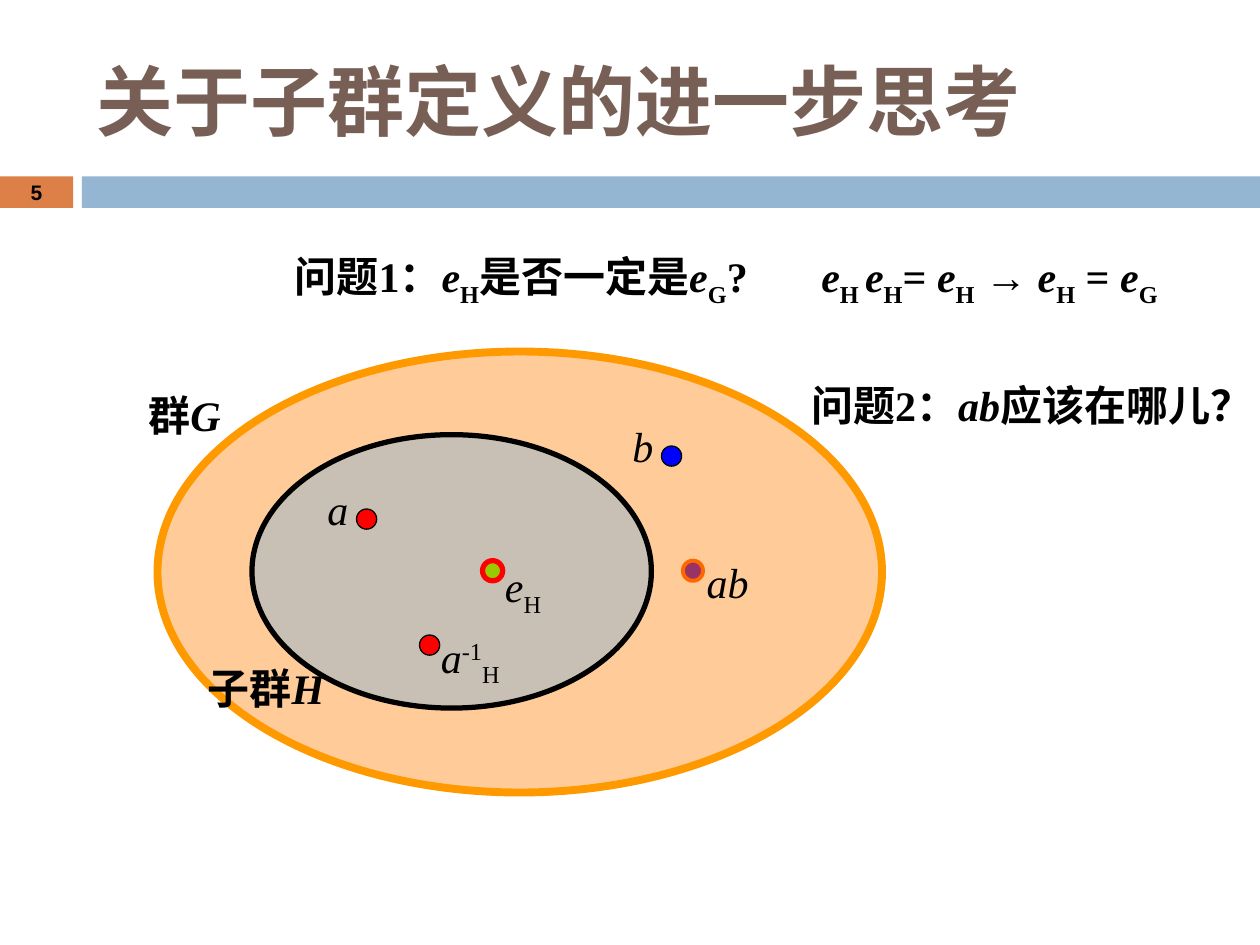
import pptx
import pptx.util
import pptx.dml.color
import pptx.enum.shapes
import pptx.enum.text
import pptx.oxml.ns
import lxml.etree

Inches = pptx.util.Inches
SHAPES = pptx.enum.shapes.MSO_SHAPE
ALIGN = pptx.enum.text.PP_ALIGN
ANCHOR = pptx.enum.text.MSO_ANCHOR
AUTO_SIZE = pptx.enum.text.MSO_AUTO_SIZE

BODY = {"name": "Times New Roman", "size": pptx.util.Pt(24), "bold": False}
STRONG = {**BODY, "bold": True}
HEADING = {"name": "Calibri", "size": pptx.util.Pt(44), "bold": True}
NUMBER = {"name": "Arial", "size": pptx.util.Pt(12), "bold": True}
BASELINES = {"sub": -25000, "sup": 30000}
DOT = 0.16


def color(value):
    """Turn a hex string into a colour."""
    return pptx.dml.color.RGBColor.from_string(value)


def place(box, left, top, width, height):
    """Give the lengths of a part set relative to the corner of a box."""
    return [Inches(n) for n in (box[0] + left, box[1] + top, width, height)]


def add_figure(page, frame, kind, fill, line=None, weight=0, alpha=None):
    """Draw a filled preset shape with an optional outline."""
    shape = page.shapes.add_shape(kind, *frame)
    shape.shadow.inherit = False
    shape.fill.solid()
    shape.fill.fore_color.rgb = color(fill)
    if alpha:
        tint = shape._element.spPr.find(".//" + pptx.oxml.ns.qn("a:srgbClr"))
        lxml.etree.SubElement(tint, pptx.oxml.ns.qn("a:alpha"), val=str(alpha * 1000))
    if line:
        shape.line.color.rgb = color(line)
        shape.line.width = pptx.util.Pt(weight)
    else:
        shape.line.fill.background()


def add_text(page, frame, spans, style, ink="000000", align=ALIGN.LEFT,
             anchor=ANCHOR.TOP, auto_size=AUTO_SIZE.SHAPE_TO_FIT_TEXT):
    """Write one paragraph of (text, role) spans; roles are up, it, sub and sup."""
    text_frame = page.shapes.add_textbox(*frame).text_frame
    layout = {"word_wrap": True, "auto_size": auto_size, "vertical_anchor": anchor}
    for name, value in layout.items():
        setattr(text_frame, name, value)
    para = text_frame.paragraphs[0]
    para.alignment = align
    for text, role in spans:
        span = para.add_run()
        span.text = text
        for name, value in {**style, "italic": role == "it"}.items():
            setattr(span.font, name, value)
        span.font.color.rgb = color(ink)
        if role in BASELINES:
            span.font._element.set("baseline", str(BASELINES[role]))


def add_header(page, box):
    """Place the title above the band that holds the page number."""
    width = box[2]
    fixed = {"anchor": ANCHOR.MIDDLE, "auto_size": AUTO_SIZE.NONE}
    add_figure(page, place(box, 0, 1.4, 0.58, 0.25), SHAPES.RECTANGLE, "DD8047")
    add_figure(page, place(box, 0.65, 1.4, width - 0.65, 0.25), SHAPES.RECTANGLE, "94B6D2")
    add_text(page, place(box, 0, 1.39, 0.58, 0.27), [("5", "up")], NUMBER,
             align=ALIGN.CENTER, **fixed)
    add_text(page, place(box, 0.67, 0.25, 8.92, 1.08),
             [("关于子群定义的进一步思考", "up")], HEADING, "775F55", **fixed)


def add_groups(page, box):
    """Draw group G with subgroup H inside it, and their elements."""
    add_figure(page, place(box, 0, 0, *box[2:]), SHAPES.OVAL, "FFCC99", "FF9900", 4.5)
    add_figure(page, place(box, 0.75, 0.66, 3.17, 2.17), SHAPES.OVAL,
               "94B6D2", "000000", 3, alpha=50)
    names = [
        (-0.17, 0.25, 1.75, "群", "G"),
        (0.3, 2.42, 1.28, "子群", "H"),
    ]
    for left, top, width, word, letter in names:
        add_text(page, place(box, left, top, width, 0.5),
                 [(word, "up"), (letter, "it")], STRONG)
    elements = [
        (1.58, 1.25, "FF0000", "000000", 0.75, (-0.33, -0.25, 0.42), [("a", "it")]),
        (4, 0.75, "0000FF", "000000", 0.75, (-0.33, -0.25, 0.42), [("b", "it")]),
        (2.58, 1.66, "99CC00", "FF0000", 3, (0.08, -0.05, 1.17),
         [("e", "it"), ("H", "sub")]),
        (2.08, 2.25, "FF0000", "000000", 0.75, (0.07, -0.08, 1.25),
         [("a", "it"), ("-1", "sup"), ("H", "sub")]),
        (4.17, 1.66, "993366", "FF6600", 2.25, (0.09, -0.08, 0.83), [("ab", "it")]),
    ]
    for left, top, fill, line, weight, (right, down, width), spans in elements:
        add_figure(page, place(box, left, top, DOT, DOT), SHAPES.OVAL, fill, line, weight)
        add_text(page, place(box, left + right, top + down, width, 0.5), spans, BODY)


def add_questions(page, box):
    """Write the two questions and the answer to the first."""
    e_h = [("e", "it"), ("H", "sub")]
    e_g = [("e", "it"), ("G", "sub")]
    texts = [
        (0, 0, 3.86, [("问题1：", "up"), *e_h, ("是否一定是", "up"), *e_g, ("?", "up")]),
        (4.18, 0, 3.19, [*e_h, (" ", "sub"), *e_h, ("= ", "up"), *e_h, (" → ", "up"),
                         *e_h, (" = ", "up"), *e_g]),
        (4.1, 1.02, 3.66, [("问题2：", "up"), ("ab", "it"), ("应该在哪儿？", "up")]),
    ]
    for left, top, width, spans in texts:
        add_text(page, place(box, left, top, width, 0.5), spans, STRONG)


def main():
    """Build the deck and save it."""
    deck = pptx.Presentation()
    deck.slide_width, deck.slide_height = Inches(10), Inches(7.5)
    page = deck.slides.add_slide(deck.slide_layouts[6])
    add_header(page, (0, 0, 10, 1.66))
    add_groups(page, (1.25, 2.79, 5.75, 3.5))
    add_questions(page, (2.24, 1.94, 7.76, 1.52))
    deck.save("out.pptx")


if __name__ == "__main__":
    main()
